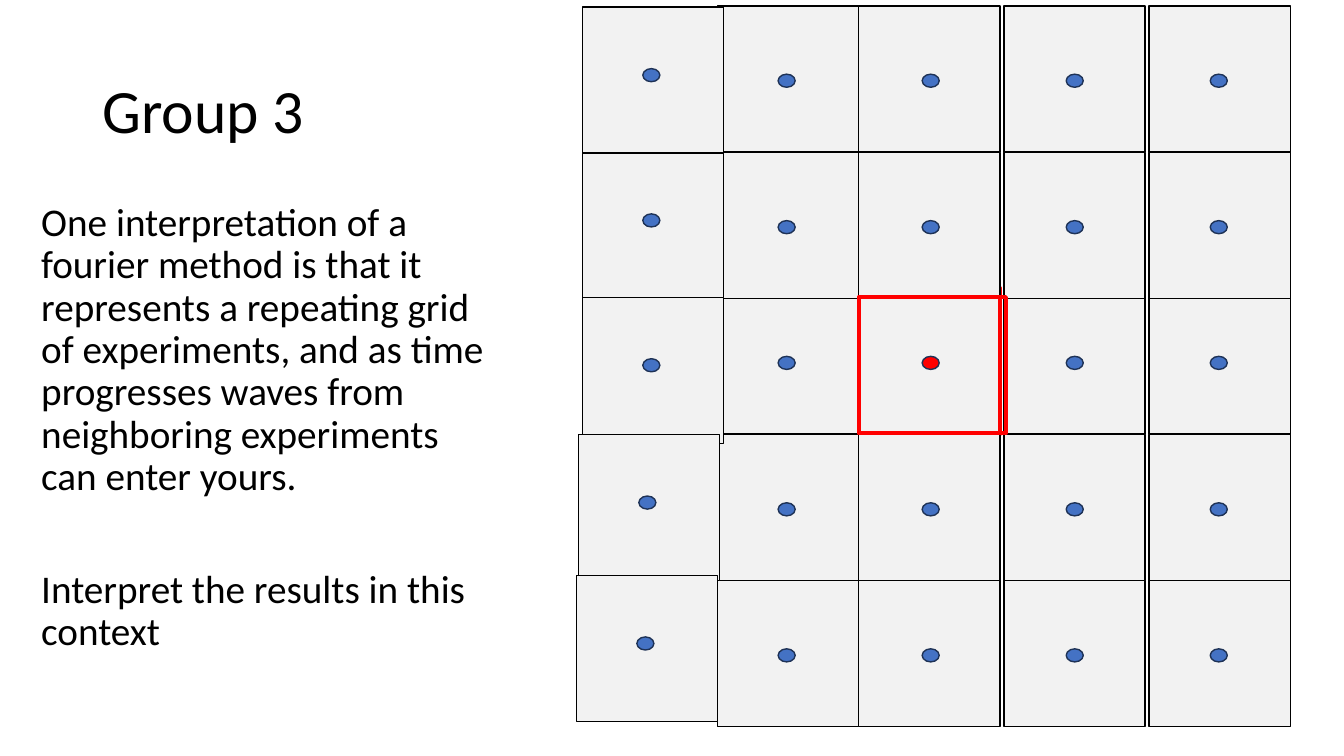
from dataclasses import dataclass

from pptx import Presentation
from pptx.dml.color import RGBColor
from pptx.enum import shapes, text
from pptx.util import Cm, Pt

RECT, OVAL = shapes.MSO_SHAPE.RECTANGLE, shapes.MSO_SHAPE.OVAL
BLACK, RED, GREY, BLUE, NAVY = "000000", "FF0000", "F2F2F2", "4472C4", "1E3256"
CELL_W, CELL_H = 3.56, 3.68
DOT_W, DOT_H = 0.43, 0.33
CELL_XS = (21.64, 18.08, 28.96, 25.3)
DOT_XS = [19.61 + 3.63 * col for col in range(4)]


@dataclass
class Box:
    x: float
    y: float
    w: float
    h: float


@dataclass
class Row:
    """Four cells side by side, one of which may be marked in red."""
    y: float
    marked: bool = False


@dataclass
class Side:
    """A single cell at the left of the grid."""
    x: float
    y: float


# From back to front
GRID = (
    Row(7.26, marked=True), Row(10.95), Row(14.63), Row(3.84),
    Side(14.68, 3.84), Side(14.68, 7.49), Side(14.58, 10.95), Side(14.53, 14.5),
    Row(0.15), Side(14.68, 0.18),
)
PARAS = (
    ("One interpretation of a fourier method is that it represents a repeating "
     "grid of experiments, and as time progresses waves from neighboring "
     "experiments can enter yours.", 10),
    ("Interpret the results in this context", 50.5),
)


def rgb(code: str) -> RGBColor:
    return RGBColor.from_string(code)


def draw(parent, kind, box: Box, fill: str | None, line: str, width: float = 1):
    shape = parent.add_shape(kind, Cm(box.x), Cm(box.y), Cm(box.w), Cm(box.h))
    shape.shadow.inherit = False
    if fill:
        shape.fill.solid()
        shape.fill.fore_color.rgb = rgb(fill)
    else:
        shape.fill.background()
    shape.line.color.rgb = rgb(line)
    shape.line.width = Pt(width)


def cell(parent, x: float, y: float, marked: bool = False) -> None:
    line, width = (RED, 3) if marked else (BLACK, 1)
    draw(parent, RECT, Box(x, y, CELL_W, CELL_H), GREY, line, width)


def dot(parent, x: float, y: float, fill: str = BLUE) -> None:
    draw(parent, OVAL, Box(x, y, DOT_W, DOT_H), fill, NAVY)


def add_row(parent, row: Row) -> None:
    for i, x in enumerate(CELL_XS):
        cell(parent, x, row.y, row.marked and i == 0)
    for i, x in enumerate(DOT_XS):
        dot(parent, x, row.y + 1.72, RED if row.marked and i == 1 else BLUE)


def add_side(parent, side: Side) -> None:
    cell(parent, side.x, side.y)
    dot(parent, side.x + 1.52, side.y + 1.55)


def write(para, words: str, size: float, before: float = 0) -> None:
    para.alignment = text.PP_ALIGN.LEFT
    para.line_spacing = 0.9
    para.space_before = Pt(before)
    run = para.add_run()
    run.text = words
    run.font.name = "Calibri"
    run.font.size = Pt(size)
    run.font.color.rgb = rgb(BLACK)


def main() -> None:
    deck = Presentation()
    deck.slide_width, deck.slide_height = Cm(33.87), Cm(19.05)
    slide = deck.slides.add_slide(deck.slide_layouts[5])

    title = slide.shapes.title
    title.left, title.top = Cm(2.33), Cm(1.01)
    title.width, title.height = Cm(8.64), Cm(3.68)
    title.text_frame.vertical_anchor = text.MSO_ANCHOR.MIDDLE
    write(title.text_frame.paragraphs[0], "Group 3", 44)

    body = slide.shapes.add_textbox(Cm(0.79), Cm(4.98), Cm(11.89), Cm(12.09))
    frame = body.text_frame
    frame.word_wrap = True
    for i, (words, before) in enumerate(PARAS):
        para = frame.add_paragraph() if i else frame.paragraphs[0]
        write(para, words, 28, before)

    for part in GRID:
        group = slide.shapes.add_group_shape().shapes
        if isinstance(part, Row):
            add_row(group, part)
        else:
            add_side(group, part)
    draw(slide.shapes, RECT, Box(21.64, 7.49, 3.71, 3.43), None, RED, 3)

    deck.save("out.pptx")


if __name__ == "__main__":
    main()
